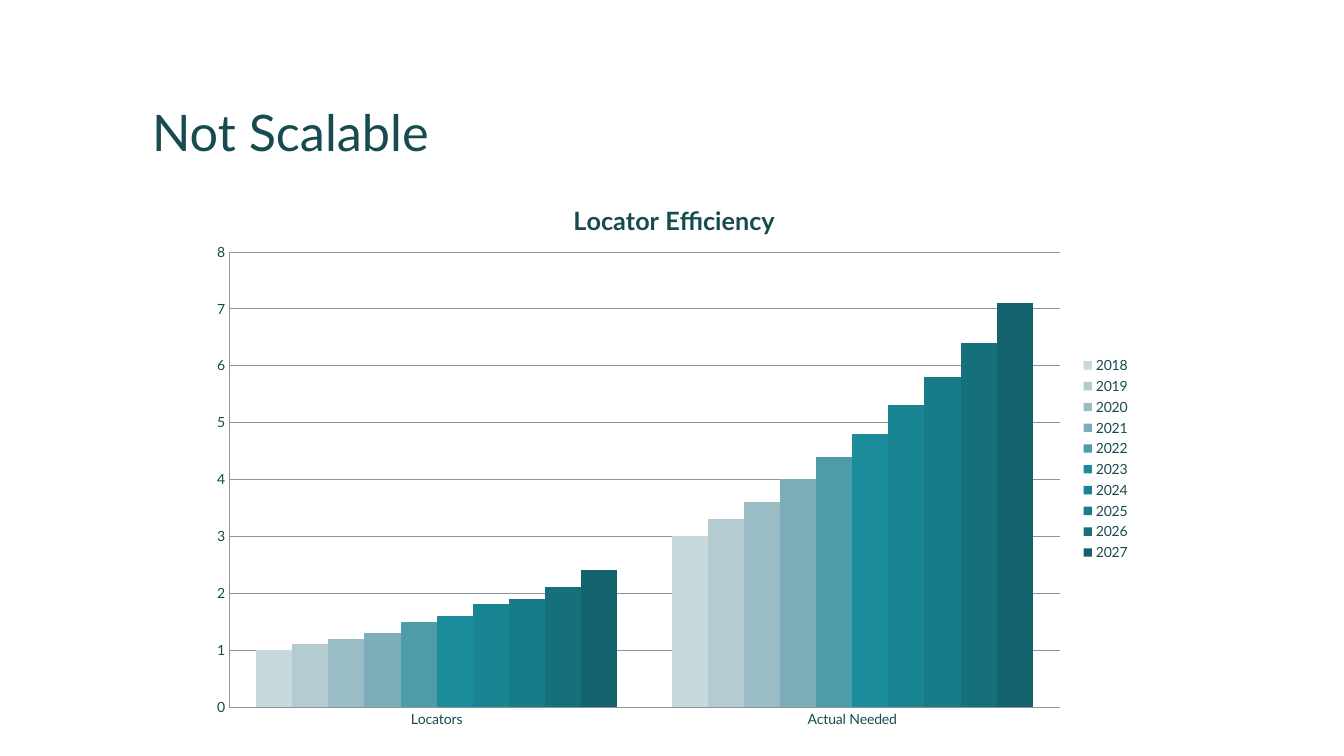
from lxml import etree
from pptx import Presentation
from pptx import util as u
from pptx.chart.data import CategoryChartData
from pptx.dml.color import RGBColor
from pptx.enum import chart as charts, text
from pptx.oxml.ns import qn

TITLE = "Not Scalable"
CHART_TITLE = "Locator Efficiency"
CATEGORIES = ["Locators", "Actual Needed"]
# year: (values per category, bar colour)
YEARS = {
    "2018": ((1, 3), "C8D9DD"),
    "2019": ((1.1, 3.3), "B3CBD1"),
    "2020": ((1.2, 3.6), "9ABCC5"),
    "2021": ((1.3, 4), "7DADB8"),
    "2022": ((1.5, 4.4), "4E9BA9"),
    "2023": ((1.6, 4.8), "1A8C9C"),
    "2024": ((1.8, 5.3), "198492"),
    "2025": ((1.9, 5.8), "177B88"),
    "2026": ((2.1, 6.4), "15707C"),
    "2027": ((2.4, 7.1), "13636E"),
}
COLORS = {"text": "164B4F", "line": "8C9697"}
FONT = "Lato"

# Boxes in px: left, top, width, height
SLIDE_SIZE = (1344, 756)
TITLE_BOX = (142, 42, 1058, 126)
CHART_BOX = (199, 175, 941, 564)
PLOT_BOX = (229, 252, 831, 455)
CHART_TITLE_POINT = (569, 198)
LEGEND_POINT = (1079, 353)


def px(length):
    return u.Emu(round(length * 914400 / 100.8))


def style_font(font, size, bold=False):
    font.name = FONT
    font.size = u.Pt(size)
    font.bold = bold
    font.color.rgb = RGBColor.from_string(COLORS["text"])


def style_line(line):
    line.color.rgb = RGBColor.from_string(COLORS["line"])
    line.width = u.Pt(0.5)


def place_in_chart(element, successors, left, top, width=None, height=None):
    """Fix a chart part at slide px, written as fractions of the chart box."""
    for old in element.findall(qn("c:layout")):
        element.remove(old)
    layout = etree.Element(qn("c:layout"))
    manual = etree.SubElement(layout, qn("c:manualLayout"))
    chart_left, chart_top, chart_width, chart_height = CHART_BOX
    settings = [("xMode", "edge"), ("yMode", "edge"),
                ("x", (left - chart_left) / chart_width),
                ("y", (top - chart_top) / chart_height)]
    if width:
        settings.insert(0, ("layoutTarget", "inner"))
        settings += [("w", width / chart_width), ("h", height / chart_height)]
    for name, value in settings:
        etree.SubElement(manual, qn("c:" + name)).set("val", str(value))
    following = [child for child in element
                 if child.tag in [qn("c:" + name) for name in successors]]
    if following:
        following[0].addprevious(layout)
    else:
        element.append(layout)


def add_title(slide):
    title = slide.shapes.title
    title.left, title.top, title.width, title.height = map(px, TITLE_BOX)
    frame = title.text_frame
    frame.text = TITLE
    frame.vertical_anchor = text.MSO_ANCHOR.BOTTOM
    paragraph = frame.paragraphs[0]
    paragraph.alignment = text.PP_ALIGN.LEFT
    paragraph.line_spacing = 0.9
    style_font(paragraph.runs[0].font, 36)


def add_efficiency_chart(slide):
    data = CategoryChartData()
    data.categories = CATEGORIES
    for year, (values, _) in YEARS.items():
        data.add_series(year, values)
    chart = slide.shapes.add_chart(
        charts.XL_CHART_TYPE.COLUMN_CLUSTERED, *map(px, CHART_BOX), data).chart
    style_font(chart.font, 10)

    chart.has_title = True
    chart_title = chart.chart_title
    chart_title.text_frame.text = CHART_TITLE
    style_font(chart_title.text_frame.paragraphs[0].runs[0].font, 18, bold=True)

    chart.has_legend = True
    legend = chart.legend
    legend.position = charts.XL_LEGEND_POSITION.RIGHT
    legend.include_in_layout = False
    style_font(legend.font, 10)

    for axis in (chart.category_axis, chart.value_axis):
        axis.major_tick_mark = axis.minor_tick_mark = charts.XL_TICK_MARK.NONE
        style_font(axis.tick_labels.font, 10)
        style_line(axis.format.line)
    value_axis = chart.value_axis
    value_axis.minimum_scale, value_axis.maximum_scale = 0, 8
    value_axis.major_unit = 1
    style_line(value_axis.major_gridlines.format.line)

    plot = chart.plots[0]
    plot.vary_by_categories = False
    plot.gap_width, plot.overlap = 150, 0
    for series, (_, color) in zip(plot.series, YEARS.values()):
        series.format.fill.solid()
        series.format.fill.fore_color.rgb = RGBColor.from_string(color)

    plot_area = chart.element.find(".//" + qn("c:plotArea"))
    place_in_chart(plot_area, ["barChart"], *PLOT_BOX)
    place_in_chart(chart_title.element if hasattr(chart_title, "element")
                   else chart.element.find(".//" + qn("c:title")),
                   ["overlay", "spPr", "txPr"], *CHART_TITLE_POINT)
    place_in_chart(chart.element.find(".//" + qn("c:legend")),
                   ["overlay", "spPr", "txPr"], *LEGEND_POINT)


def main():
    presentation = Presentation()
    presentation.slide_width, presentation.slide_height = map(px, SLIDE_SIZE)
    slide = presentation.slides.add_slide(presentation.slide_layouts[5])
    add_title(slide)
    add_efficiency_chart(slide)
    presentation.save("out.pptx")


if __name__ == "__main__":
    main()
